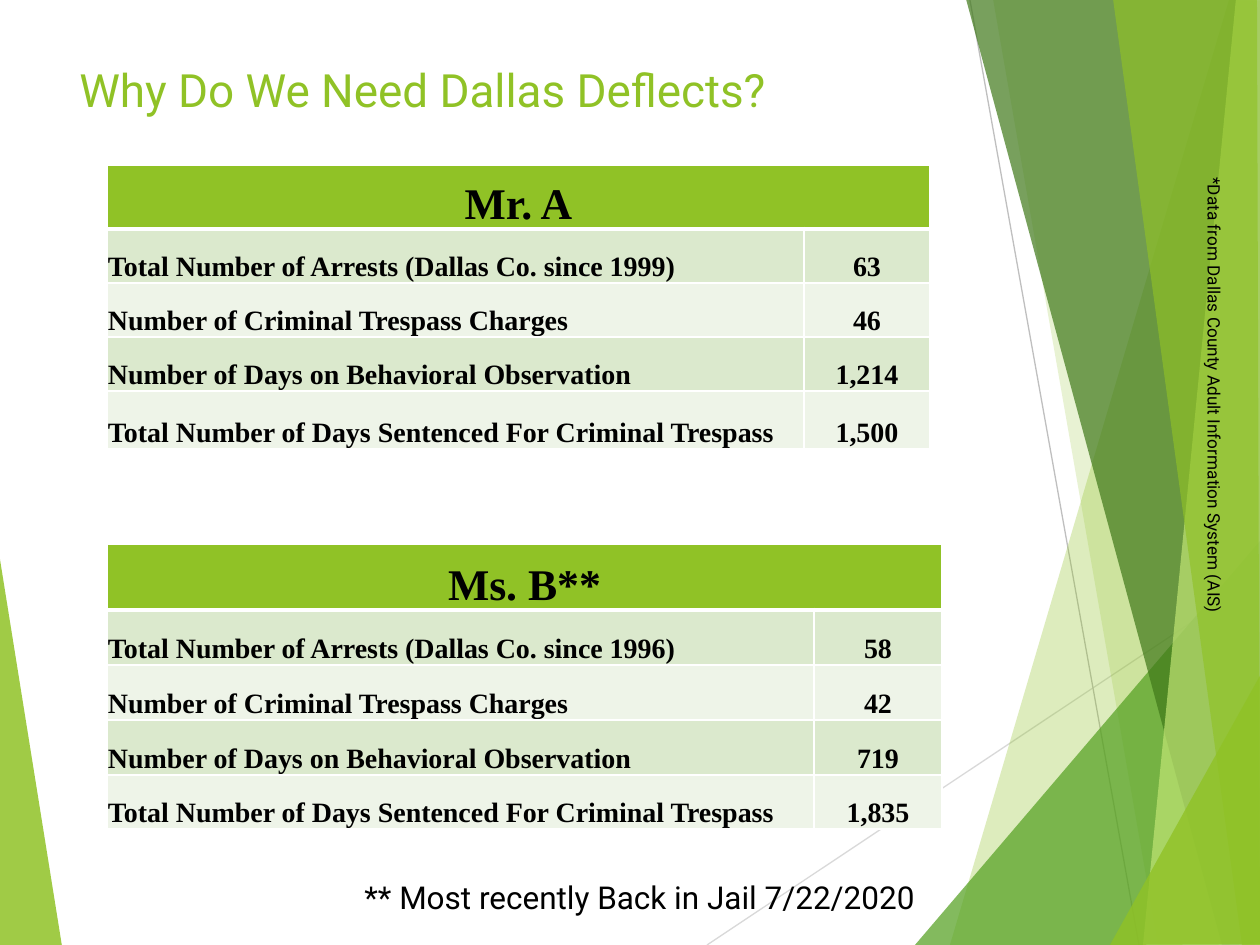
from lxml.etree import SubElement
from pptx import Presentation
from pptx.dml.color import RGBColor
from pptx.enum.shapes import MSO_CONNECTOR as Connector
from pptx.enum.text import MSO_ANCHOR as Anchor, PP_ALIGN as Align
from pptx.oxml.ns import qn
from pptx.util import Emu, Pt

EMU_PER_INCH = 914400
PX_PER_INCH = 126
COLORS = {
    "lime": "90C226", "green": "54A021", "forest": "3F7819", "pale": "C0E474",
    "band_dark": "DBE9CD", "band_light": "EEF4E8", "white": "FFFFFF",
    "black": "000000", "line_light": "D9D9D9", "line_dark": "BFBFBF",
}

# Background facets from back to front: color, opacity in percent, corners
LEFT_FACET = ("lime", 85, [(-1, 553), (62, 946), (-1, 945)])
RIGHT_FACETS = [
    ("lime", 30, [(1229, 0), (950, 945), (1262, 946), (1261, 1)]),
    ("lime", 20, [(993, -1), (1158, 945), (1261, 945), (1261, -1)]),
    ("green", 72, [(915, 945), (1260, 541), (1261, 945)]),
    ("forest", 70, [(966, -1), (1222, 945), (1261, 944), (1261, -1)]),
    ("pale", 70, [(1236, -1), (1143, 945), (1261, 945), (1260, -1)]),
    ("lime", 65, [(1113, -1), (1242, 945), (1260, 945), (1257, -1)]),
    ("lime", 80, [(1110, 945), (1261, 674), (1261, 944)]),
]

ROW_LABELS = [
    "Total Number of Arrests (Dallas Co. since {})",
    "Number of Criminal Trespass Charges",
    "Number of Days on Behavioral Observation",
    "Total Number of Days Sentenced For Criminal Trespass",
]


def px(length):
    return Emu(round(length * EMU_PER_INCH / PX_PER_INCH))


def rgb(name):
    return RGBColor.from_string(COLORS[name])


def format_text(text_frame, size, font_name, color="black", bold=False, align=None):
    for paragraph in text_frame.paragraphs:
        paragraph.alignment = align
        for run in paragraph.runs:
            run.font.size = Pt(size)
            run.font.name = font_name
            run.font.bold = bold
            run.font.color.rgb = rgb(color)


def add_facet(slide, color, opacity, points):
    builder = slide.shapes.build_freeform(*map(px, points[0]), scale=1.0)
    builder.add_line_segments([(px(x), px(y)) for x, y in points[1:]], close=True)
    shape = builder.convert_to_shape()
    shape.shadow.inherit = False
    shape.fill.solid()
    shape.fill.fore_color.rgb = rgb(color)
    shape.line.fill.background()
    fill_color = shape.fill._xPr.find(qn("a:solidFill"))[0]
    SubElement(fill_color, qn("a:alpha"), val=str(opacity * 1000))


def add_line(slide, start, end, color):
    line = slide.shapes.add_connector(
        Connector.STRAIGHT, *map(px, start), *map(px, end))
    line.line.color.rgb = rgb(color)
    line.line.width = Pt(0.75)
    SubElement(line._element.spPr, qn("a:effectLst"))


def add_text(slide, box, text, size, color="black", rotation=0):
    shape = slide.shapes.add_textbox(*map(px, box))
    shape.rotation = rotation
    text_frame = shape.text_frame
    text_frame.word_wrap = True
    text_frame.text = text
    format_text(text_frame, size, "Roboto", color)


def set_borders(cell, bottom_width):
    properties = cell._tc.get_or_add_tcPr()
    widths = {"a:lnL": 1, "a:lnR": 1, "a:lnT": 1, "a:lnB": bottom_width}
    for index, (tag, width) in enumerate(widths.items()):
        border = SubElement(properties, qn(tag), w=str(Pt(width)))
        fill = SubElement(border, qn("a:solidFill"))
        SubElement(fill, qn("a:srgbClr"), val=COLORS["white"])
        properties.insert(index, border)  # borders come before the fill


def style_cell(cell, text, fill, size, align, bottom_width=1):
    cell.text = text
    cell.vertical_anchor = Anchor.BOTTOM
    cell.margin_left = cell.margin_right = cell.margin_top = px(1)
    cell.margin_bottom = 0
    cell.fill.solid()
    cell.fill.fore_color.rgb = rgb(fill)
    format_text(cell.text_frame, size, "Times New Roman", bold=True, align=align)
    set_borders(cell, bottom_width)


def add_person_table(slide, top, columns, rows, name, since, values):
    frame = slide.shapes.add_table(
        len(rows), len(columns), px(107), px(top), px(sum(columns)), px(sum(rows)))
    table = frame.table
    for column, width in zip(table.columns, columns):
        column.width = px(width)
    for row, height in zip(table.rows, rows):
        row.height = px(height)

    # Header across both columns
    table.cell(0, 0).merge(table.cell(0, 1))
    style_cell(table.cell(0, 0), name, "lime", 25, Align.CENTER, 3)
    style_cell(table.cell(0, 1), "", "lime", 25, Align.CENTER, 3)

    # Banded rows
    for index, (label, value) in enumerate(zip(ROW_LABELS, values), start=1):
        fill = "band_dark" if index % 2 else "band_light"
        style_cell(table.cell(index, 0), label.format(since), fill, 16, Align.LEFT)
        style_cell(table.cell(index, 1), value, fill, 16, Align.CENTER)


def main():
    presentation = Presentation()
    presentation.slide_width = px(1260)
    presentation.slide_height = px(945)
    slide = presentation.slides.add_slide(presentation.slide_layouts[6])

    # Background
    add_facet(slide, *LEFT_FACET)
    add_line(slide, (707, 945), (1261, 576), "line_light")
    add_line(slide, (970, 0), (1139, 945), "line_dark")
    for facet in RIGHT_FACETS:
        add_facet(slide, *facet)

    # Title, tables and notes
    add_text(slide, (67, 55, 971, 117), "Why Do We Need Dallas Deflects?", 26.2, "lime")
    add_person_table(slide, 165, [697, 126], [64, 54, 54, 54, 58],
                     "Mr. A", 1999, ["63", "46", "1,214", "1,500"])
    add_text(slide, (958, 404, 512, 34),
             "*Data from Dallas County Adult Information System (AIS)", 9.8, rotation=90)
    add_person_table(slide, 544, [707, 128], [66, 55, 55, 55, 54],
                     "Ms. B**", 1996, ["58", "42", "719", "1,835"])
    add_text(slide, (352, 872, 578, 50), "** Most recently Back in Jail 7/22/2020", 18)

    presentation.save("out.pptx")


if __name__ == "__main__":
    main()
